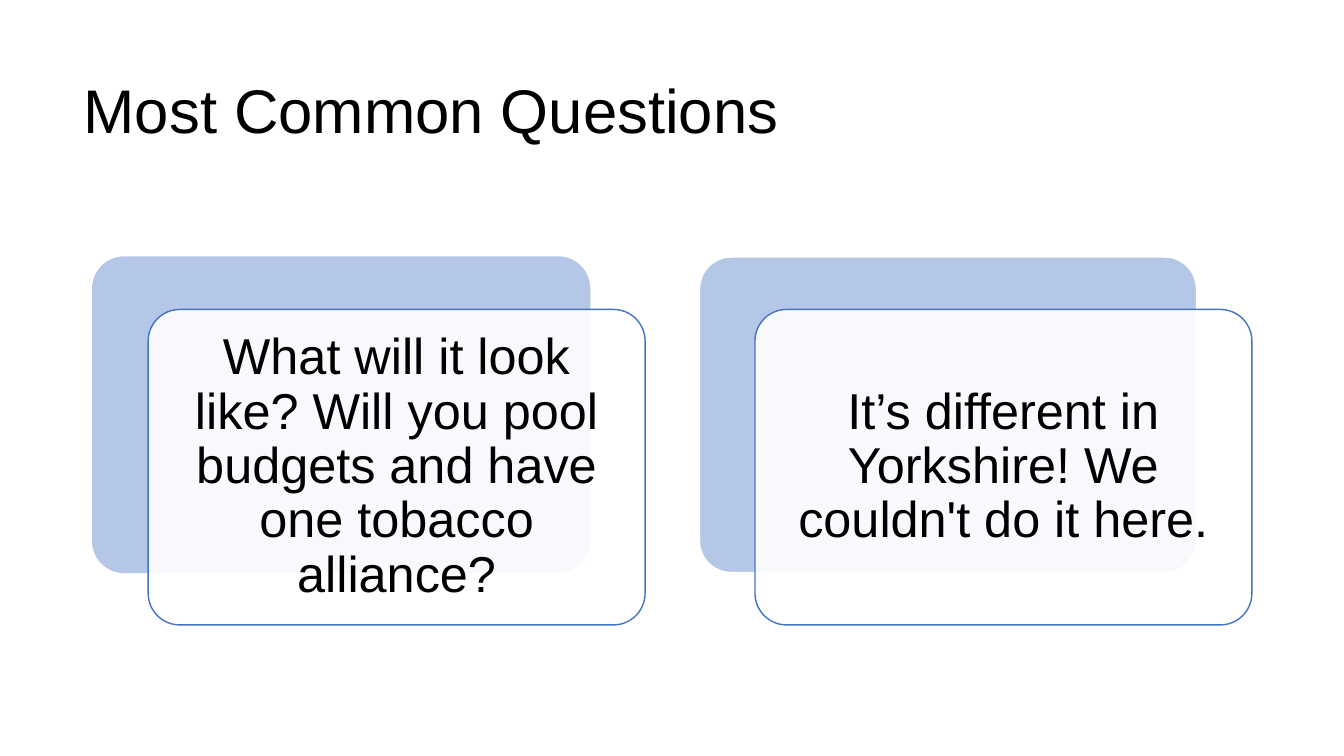
from dataclasses import dataclass

from lxml import etree
from pptx import Presentation
from pptx.dml.color import RGBColor
from pptx.enum.shapes import MSO_SHAPE
from pptx.enum.text import MSO_ANCHOR, MSO_AUTO_SIZE, PP_ALIGN
from pptx.oxml.ns import qn
from pptx.shapes.autoshape import Shape
from pptx.slide import Slide
from pptx.text.text import TextFrame
from pptx.util import Pt

ROUNDED = MSO_SHAPE.ROUNDED_RECTANGLE
MIDDLE = MSO_ANCHOR.MIDDLE
NO_AUTOFIT = MSO_AUTO_SIZE.NONE
LEFT, CENTER = PP_ALIGN.LEFT, PP_ALIGN.CENTER
TITLE_ONLY = 5


@dataclass(frozen=True)
class Theme:
    font: str = "Arial"
    title_size: float = 44
    card_size: float = 36
    line_spacing: float = 0.9
    text: RGBColor = RGBColor(0x00, 0x00, 0x00)
    white: RGBColor = RGBColor(0xFF, 0xFF, 0xFF)
    pale_blue: RGBColor = RGBColor(0xB4, 0xC7, 0xE7)
    blue: RGBColor = RGBColor(0x44, 0x72, 0xC4)


@dataclass(frozen=True)
class Card:
    question: str
    back_line: RGBColor


THEME = Theme()
CARDS = (
    Card("What will it look like? Will you pool budgets and have one tobacco alliance?",
         THEME.pale_blue),
    Card("It’s different in Yorkshire! We couldn't do it here.", THEME.white),
)

# Card layout, in points
CARD_LEFT, CARD_TOP = 66.24, 183.6
CARD_WIDTH, CARD_HEIGHT = 354.96, 225.36
CARD_STEP = 433.44
FRONT_SHIFT_X, FRONT_SHIFT_Y = 39.6, 37.44
CARD_INSET = 10.8
FRONT_OPACITY = 90


def write_text(frame: TextFrame, text: str, size: float, align: PP_ALIGN) -> None:
    frame.word_wrap = True
    frame.auto_size = NO_AUTOFIT
    frame.vertical_anchor = MIDDLE
    para = frame.paragraphs[0]
    para.text = text
    para.alignment = align
    para.line_spacing = THEME.line_spacing
    para.font.name = THEME.font
    para.font.size = Pt(size)
    para.font.color.rgb = THEME.text


def add_panel(page: Slide, left: float, top: float, fill: RGBColor, line: RGBColor) -> Shape:
    panel = page.shapes.add_shape(
        ROUNDED, Pt(left), Pt(top), Pt(CARD_WIDTH), Pt(CARD_HEIGHT))
    panel.adjustments[0] = 0.1
    panel.shadow.inherit = False
    panel.fill.solid()
    panel.fill.fore_color.rgb = fill
    panel.line.color.rgb = line
    panel.line.width = Pt(1)
    return panel


def set_opacity(panel: Shape, percent: int) -> None:
    color = panel.element.spPr.find(qn("a:solidFill")).find(qn("a:srgbClr"))
    etree.SubElement(color, qn("a:alpha"), val=str(percent * 1000))


def add_card(page: Slide, card: Card, left: float) -> None:
    add_panel(page, left, CARD_TOP, THEME.pale_blue, card.back_line)
    front = add_panel(page, left + FRONT_SHIFT_X, CARD_TOP + FRONT_SHIFT_Y,
                      THEME.white, THEME.blue)
    set_opacity(front, FRONT_OPACITY)
    frame = front.text_frame
    frame.margin_left = frame.margin_right = Pt(CARD_INSET)
    frame.margin_top = frame.margin_bottom = Pt(CARD_INSET)
    write_text(frame, card.question, THEME.card_size, CENTER)


def main() -> None:
    deck = Presentation()
    deck.slide_width, deck.slide_height = Pt(960), Pt(540)
    page = deck.slides.add_slide(deck.slide_layouts[TITLE_ONLY])

    # Title
    title = page.shapes.title
    title.left, title.top = Pt(52.56), Pt(38.88)
    title.width, title.height = Pt(692.64), Pt(84.96)
    write_text(title.text_frame, "Most Common Questions", THEME.title_size, LEFT)

    # Question cards
    for index, card in enumerate(CARDS):
        add_card(page, card, CARD_LEFT + index * CARD_STEP)

    deck.save("out.pptx")


if __name__ == "__main__":
    main()
